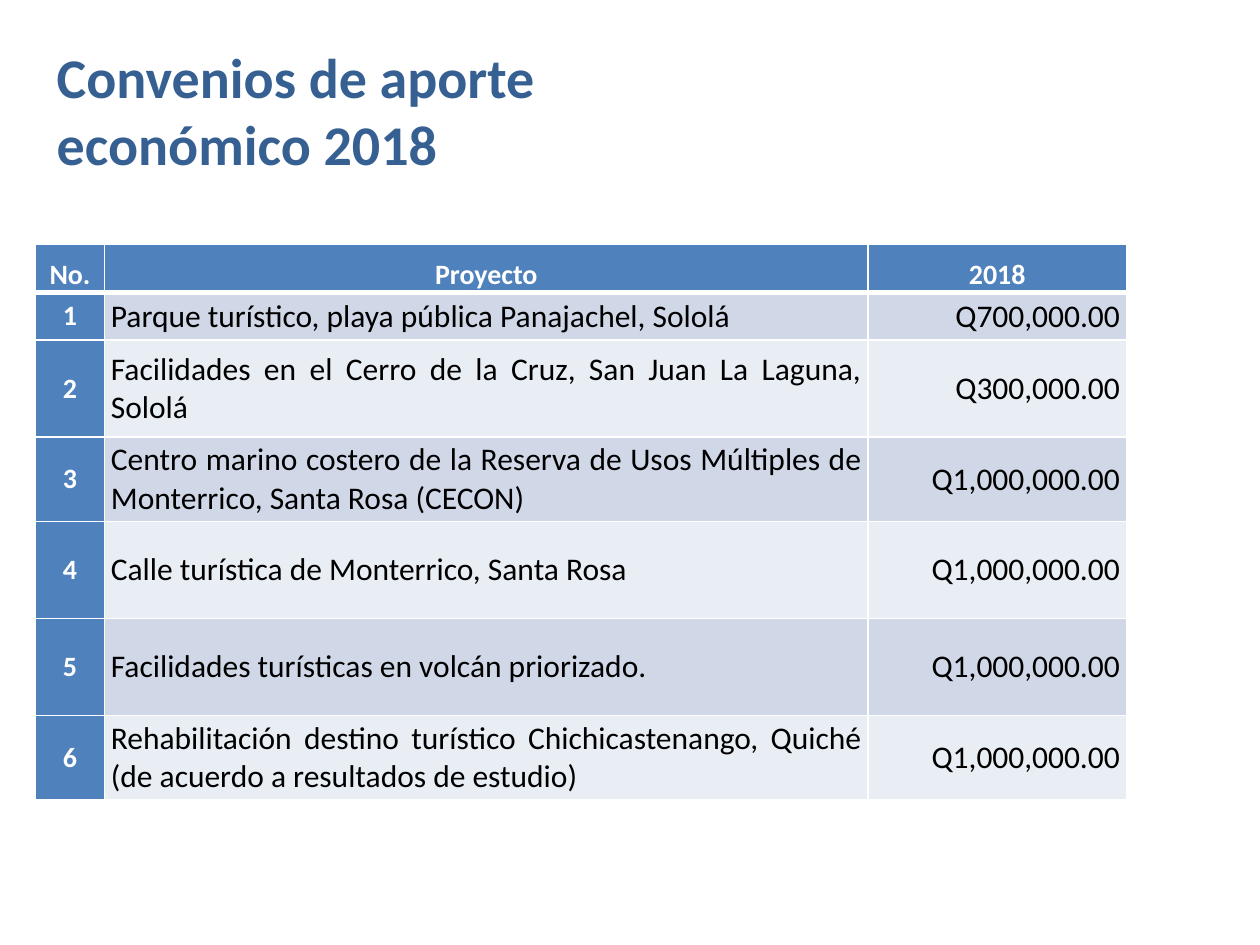
from lxml.etree import SubElement
from pptx import Presentation
from pptx.dml.color import RGBColor
from pptx.enum.text import MSO_ANCHOR, PP_ALIGN
from pptx.oxml.ns import qn
from pptx.util import Inches, Pt

NAVY = RGBColor(0x37, 0x60, 0x92)
BLUE = RGBColor(0x4F, 0x81, 0xBD)
BANDS = RGBColor(0xD0, 0xD8, 0xE8), RGBColor(0xE9, 0xED, 0xF4)
WHITE = RGBColor(0xFF, 0xFF, 0xFF)
BLACK = RGBColor(0, 0, 0)

HEADS = ["No.", "Proyecto", "2018"]
PLANS = [
    ("Parque turístico, playa pública Panajachel, Sololá", 700000),
    ("Facilidades en el Cerro de la Cruz, San Juan La Laguna, Sololá", 300000),
    ("Centro marino costero de la Reserva de Usos Múltiples de Monterrico, "
     "Santa Rosa (CECON)", 1000000),
    ("Calle turística de Monterrico, Santa Rosa", 1000000),
    ("Facilidades turísticas en volcán priorizado.", 1000000),
    ("Rehabilitación destino turístico Chichicastenango, Quiché "
     "(de acuerdo a resultados de estudio)", 1000000),
]
WIDTHS = [0.55, 6.06, 2.05]
HEIGHTS = [0.38, 0.38, 0.77, 0.67, 0.77, 0.77, 0.67]
ALIGNS = [PP_ALIGN.CENTER, PP_ALIGN.JUSTIFY, PP_ALIGN.RIGHT]


class Deck:
    """Hold the text style and the current slide, and add elements to it."""

    def __init__(self, font):
        self.font = font
        self.show = Presentation()
        self.show.slide_width = Inches(10)
        self.show.slide_height = Inches(7.5)
        self.slide = self.show.slides.add_slide(self.show.slide_layouts[5])

    def text(self, frame, words, size, color, bold, align):
        para = frame.paragraphs[0]
        para.alignment = align
        run = para.add_run()
        run.text = words
        run.font.name = self.font
        run.font.size = Pt(size)
        run.font.bold = bold
        run.font.color.rgb = color

    def title(self, words, left, top, width, height):
        shape = self.slide.shapes.title
        shape.left, shape.top = Inches(left), Inches(top)
        shape.width, shape.height = Inches(width), Inches(height)
        frame = shape.text_frame
        frame.word_wrap = True
        frame.vertical_anchor = MSO_ANCHOR.MIDDLE
        self.text(frame, words, 32, NAVY, True, PP_ALIGN.LEFT)

    def edge(self, cell, side, width):
        line = SubElement(cell._tc.get_or_add_tcPr(), qn("a:ln" + side), w=str(Pt(width)))
        fill = SubElement(line, qn("a:solidFill"))
        SubElement(fill, qn("a:srgbClr"), val=str(WHITE))

    def cell(self, cell, words, row, col):
        head = row == 0
        key = head or col == 0
        cell.margin_left = cell.margin_right = Inches(0.05)
        cell.margin_top = cell.margin_bottom = 0
        cell.vertical_anchor = MSO_ANCHOR.BOTTOM if head else MSO_ANCHOR.MIDDLE
        for side in "LRTB":
            thick = (row, side) in [(0, "B"), (1, "T")]
            self.edge(cell, side, 3 if thick else 1)
        cell.fill.solid()
        cell.fill.fore_color.rgb = BLUE if key else BANDS[(row - 1) % 2]
        self.text(cell.text_frame, words, 16 if key else 18, WHITE if key else BLACK,
                  key, PP_ALIGN.CENTER if head else ALIGNS[col])

    def table(self, rows, left, top, widths, heights):
        table = self.slide.shapes.add_table(
            len(rows), len(widths), Inches(left), Inches(top),
            Inches(sum(widths)), Inches(sum(heights))).table
        for col, width in zip(table.columns, widths):
            col.width = Inches(width)
        for row, height in zip(table.rows, heights):
            row.height = Inches(height)
        for r, line in enumerate(rows):
            for c, words in enumerate(line):
                self.cell(table.cell(r, c), words, r, c)


def main():
    deck = Deck("Calibri")
    deck.title("Convenios de aporte económico 2018", 0.35, 0.21, 5.21, 1.32)
    rows = [HEADS] + [[str(n), name, f"Q{cost:,.2f}"]
                      for n, (name, cost) in enumerate(PLANS, 1)]
    deck.table(rows, 0.28, 1.94, WIDTHS, HEIGHTS)
    deck.show.save("out.pptx")


if __name__ == "__main__":
    main()
